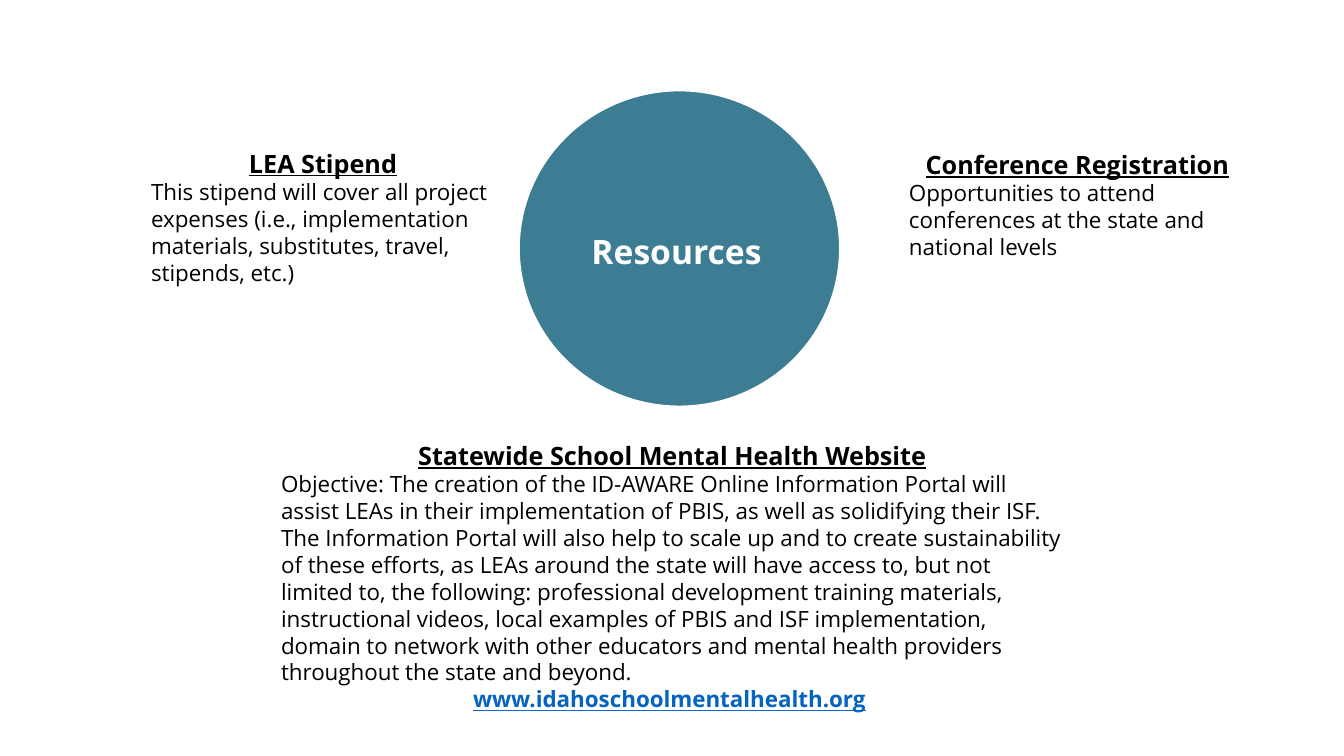
from pptx import Presentation
from pptx.dml.color import RGBColor
from pptx.enum import shapes, text
from pptx.util import Pt

FONT = "Open Sans"
TEAL = RGBColor(0x3D, 0x7D, 0x93)
WHITE = RGBColor(0xFF, 0xFF, 0xFF)
BLACK = RGBColor(0x00, 0x00, 0x00)
BLUE = RGBColor(0x05, 0x63, 0xC1)

PORTAL = (
    "Objective: The creation of the ID-AWARE Online Information Portal will "
    "assist LEAs in their implementation of PBIS, as well as solidifying their "
    "ISF. The Information Portal will also help to scale up and to create "
    "sustainability of these efforts, as LEAs around the state will have access "
    "to, but not limited to, the following: professional development training "
    "materials, instructional videos, local examples of PBIS and ISF "
    "implementation, domain to network with other educators and mental health "
    "providers throughout the state and beyond."
)
STIPEND = (
    "This stipend will cover all project expenses (i.e., implementation "
    "materials, substitutes, travel, stipends, etc.)"
)
EVENTS = "Opportunities to attend conferences at the state and national levels"


def style(para, size, color, bold=False, line=False, center=False):
    font = para.font
    font.name, font.size, font.bold = FONT, Pt(size), bold
    font.underline = line
    font.color.rgb = color
    para.alignment = text.PP_ALIGN.CENTER if center else text.PP_ALIGN.LEFT


def add_form(slide, kind, box):
    form = slide.shapes.add_shape(kind, *map(Pt, box))
    form.shadow.inherit = False
    form.fill.solid()
    form.fill.fore_color.rgb = TEAL
    return form


def add_hub(slide, label):
    # White-edged disc
    disc = add_form(slide, shapes.MSO_SHAPE.OVAL, (370.8, 64.8, 229, 225.4))
    disc.line.color.rgb = WHITE
    disc.line.width = Pt(1)

    # Label inside the disc
    plate = add_form(slide, shapes.MSO_SHAPE.RECTANGLE, (411.1, 108.7, 150.5, 144.7))
    plate.line.fill.background()
    frame = plate.text_frame
    frame.word_wrap = True
    frame.vertical_anchor = text.MSO_ANCHOR.MIDDLE
    frame.margin_left = frame.margin_right = Pt(0.7)
    frame.margin_top = frame.margin_bottom = Pt(0.7)
    para = frame.paragraphs[0]
    para.text = label
    para.line_spacing = 0.9
    style(para, 24, WHITE, bold=True, center=True)


def add_note(slide, box, title, body, site=None):
    frame = slide.shapes.add_textbox(*map(Pt, box)).text_frame
    frame.word_wrap = True
    frame.auto_size = text.MSO_AUTO_SIZE.SHAPE_TO_FIT_TEXT
    head = frame.paragraphs[0]
    head.text = title
    style(head, 18, BLACK, bold=True, line=True, center=True)
    para = frame.add_paragraph()
    para.text = body
    style(para, 16, BLACK)
    if site:
        para = frame.add_paragraph()
        style(para, 16, BLUE, bold=True, center=True)
        run = para.add_run()
        run.text = site
        run.font.underline = True
        para.add_run().text = " "


def main():
    deck = Presentation()
    deck.slide_width, deck.slide_height = Pt(960), Pt(540)
    slide = deck.slides.add_slide(deck.slide_layouts[6])

    # Central topic
    add_hub(slide, "Resources ")

    # Notes below, left and right of the hub
    add_note(slide, (193.7, 311, 573.1, 205.9),
             "Statewide School Mental Health Website", PORTAL,
             "www.idahoschoolmentalhealth.org")
    add_note(slide, (100.8, 102.2, 259.9, 106.6), "LEA Stipend", STIPEND)
    add_note(slide, (642.2, 103, 254.9, 110.2), "Conference Registration", EVENTS)

    deck.save("out.pptx")


if __name__ == "__main__":
    main()
